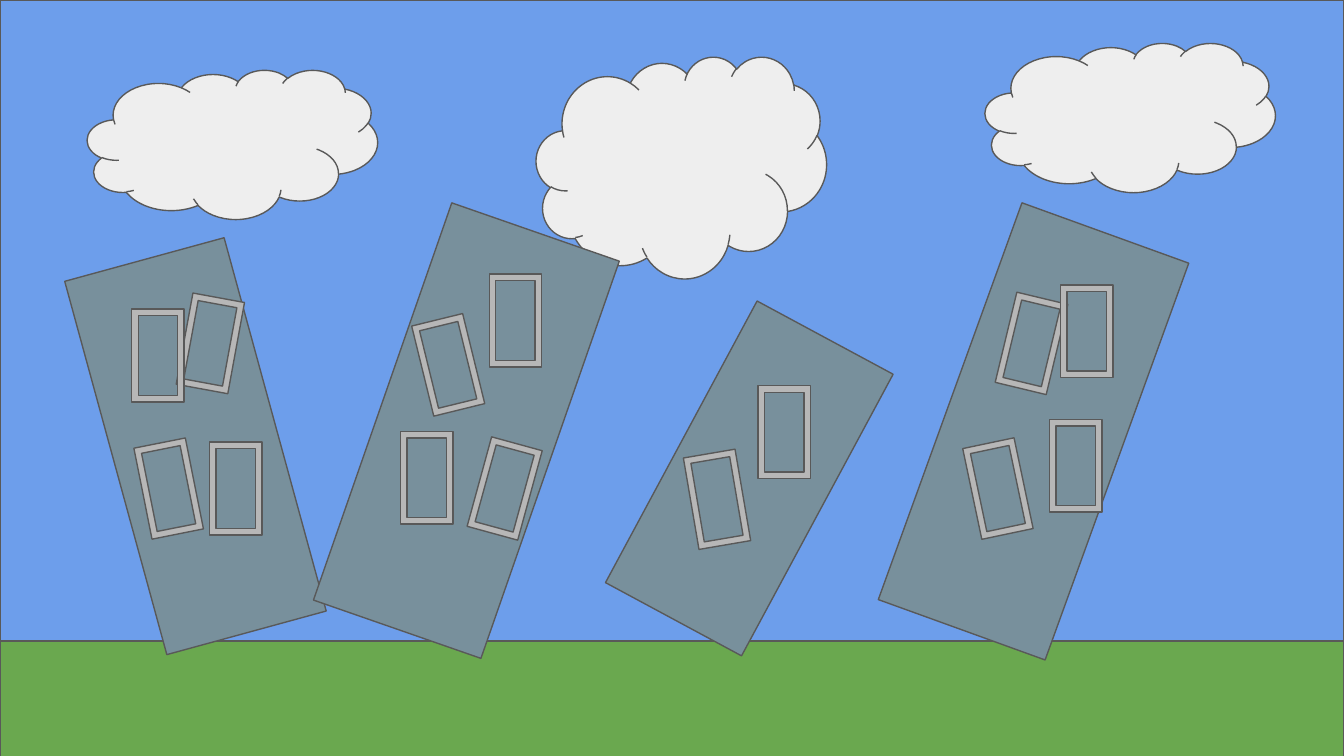
"""Draw a town of leaning houses under three clouds."""
from pptx import Presentation
from pptx.dml.color import RGBColor
from pptx.enum.shapes import MSO_SHAPE
from pptx.util import Inches, Pt

RECT, CLOUD, FRAME = MSO_SHAPE.RECTANGLE, MSO_SHAPE.CLOUD, MSO_SHAPE.FRAME
WIDE, HIGH = Inches(10), Inches(5.625)
COLS, ROWS = 100, 56.25
COLORS = {
    "grass": "6AA84F",
    "sky": "6D9EEB",
    "cloud": "EEEEEE",
    "house": "78909C",
    "frame": "B7B7B7",
    "edge": "595959",
}
LAND = 47.7
CLOUDS = [(6.5, 5.2, 11.1), (39.9, 4.2, 16.5), (73.3, 3.2, 11.1)]
HOUSES = [
    (8.4, 18.8, 12.3, 28.8, -15.3),
    (28.1, 16.4, 13.2, 31.3, 19.2),
    (50, 23.7, 11.5, 23.8, 28.3),
    (70.3, 16.4, 13.2, 31.4, 19.9),
]
PANES = [
    (13.7, 22.1, 10.4), (9.8, 23, 0), (10.6, 32.9, -11.3), (15.6, 32.9, 0),
    (31.4, 23.7, -13.8), (36.4, 20.4, 0), (35.6, 32.9, 15.3), (29.8, 32.1, 0),
    (51.4, 33.7, -9.7), (56.4, 28.7, 0),
    (74.8, 22.1, 13.5), (78.9, 21.2, 0), (78.1, 31.2, 0), (72.3, 32.9, -11.9),
]


def paint(fill, color):
    """Give a fill one solid colour."""
    fill.solid()
    fill.fore_color.rgb = RGBColor.from_string(COLORS[color])


def style(part, form):
    """Set each attribute named in a dict of format values."""
    for name, value in form.items():
        setattr(part, name, value)


def draw(slide, kind, color, col, row, wide, high, turn=0):
    """Add one outlined shape placed on the grid."""
    across, down = WIDE / COLS, HIGH / ROWS
    box = [round(n) for n in (col * across, row * down, wide * across, high * down)]
    shape = slide.shapes.add_shape(kind, *box)
    paint(shape.fill, color)
    paint(shape.line.fill, "edge")
    style(shape, {"rotation": turn})
    style(shape.line, {"width": Pt(0.75)})
    style(shape.shadow, {"inherit": False})
    return shape


def scene(slide):
    """Add the grass and the sky."""
    draw(slide, RECT, "grass", 0, LAND, COLS, 9.1)
    draw(slide, RECT, "sky", 0, 0, COLS, LAND)


def cloud(slide, col, row, high):
    """Add one cloud."""
    draw(slide, CLOUD, "cloud", col, row, 21.6, high)


def house(slide, *place):
    """Add one leaning house."""
    draw(slide, RECT, "house", *place)


def pane(slide, col, row, turn):
    """Add one window frame."""
    shape = draw(slide, FRAME, "frame", col, row, 3.9, 6.9, turn)
    shape.adjustments[0] = 0.125


def main():
    """Build and save the slide."""
    deck = Presentation()
    style(deck, {"slide_width": WIDE, "slide_height": HIGH})
    slide = deck.slides.add_slide(deck.slide_layouts[6])
    scene(slide)
    for add, places in ((cloud, CLOUDS), (house, HOUSES), (pane, PANES)):
        for place in places:
            add(slide, *place)
    deck.save("out.pptx")


if __name__ == "__main__":
    main()
